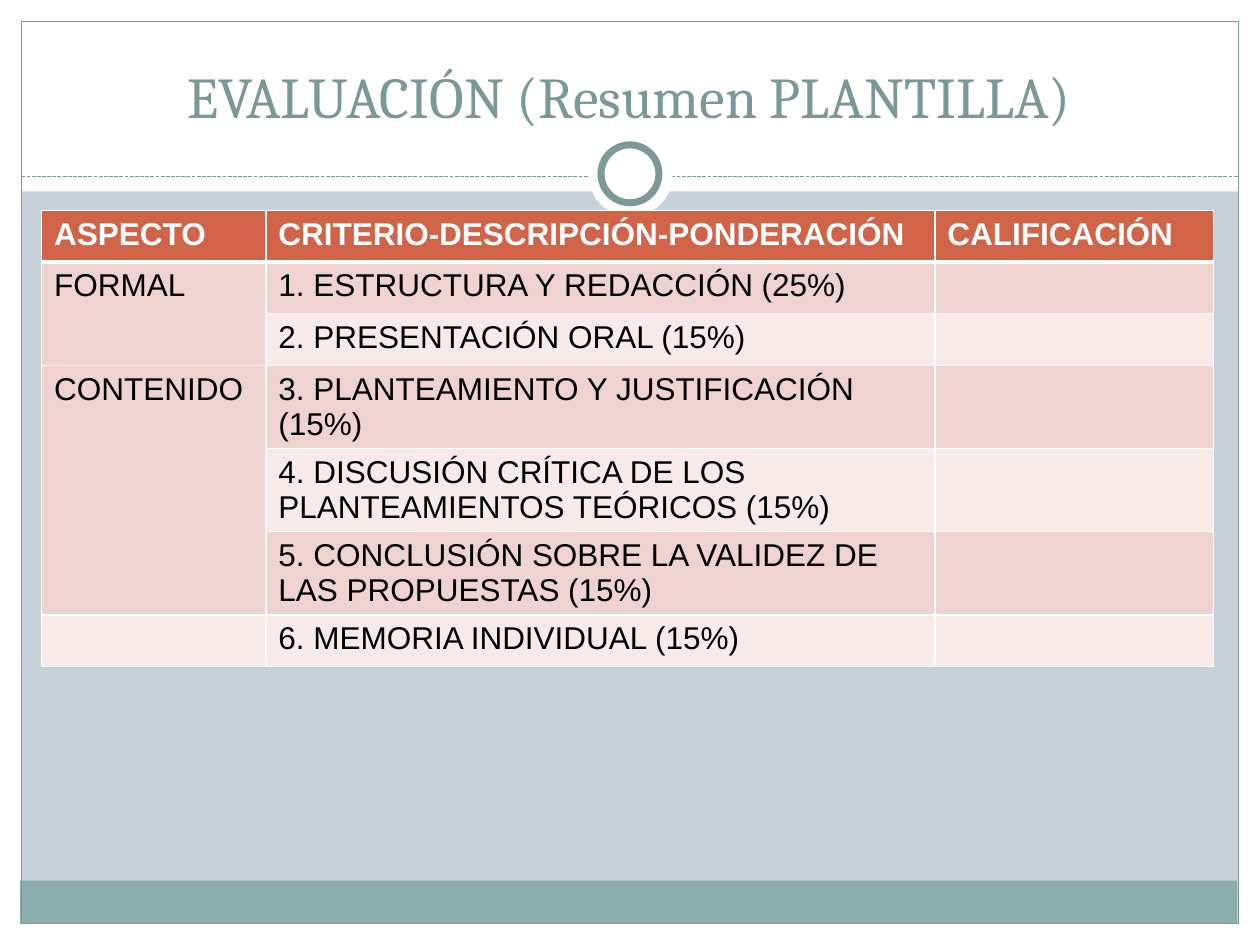
"""Build the evaluation summary slide with its criteria table."""
from dataclasses import dataclass
from typing import Optional

from lxml import etree
from pptx import Presentation
from pptx.dml.color import RGBColor
from pptx.enum.dml import MSO_LINE
from pptx.enum.shapes import MSO_CONNECTOR, MSO_SHAPE
from pptx.enum.text import MSO_ANCHOR, PP_ALIGN
from pptx.oxml.ns import qn
from pptx.util import Inches, Pt

RECT, OVAL = MSO_SHAPE.RECTANGLE, MSO_SHAPE.OVAL
STRAIGHT, DASH = MSO_CONNECTOR.STRAIGHT, MSO_LINE.SQUARE_DOT
CENTER, BOTTOM = PP_ALIGN.CENTER, MSO_ANCHOR.BOTTOM
WHITE, SLATE, TEAL, BLUE_GREY = "FFFFFF", "7C999A", "8CADAE", "C5D1D7"
HEADER_FILL, BANDS = "D16349", ("F7EAE9", "EED3D0")
COLUMN_WIDTHS, ROW_HEIGHT = (1.78, 5.31, 2.21), 0.41
HEADER = ("ASPECTO", "CRITERIO-DESCRIPCIÓN-PONDERACIÓN", "CALIFICACIÓN")


@dataclass
class Panel:
    """A filled or outlined part of the frame, in inches and points."""
    left: float
    top: float
    width: float
    height: float
    fill: Optional[str] = WHITE
    line_width: float = 0
    kind: int = RECT


@dataclass
class Aspect:
    """An aspect and the criteria that it spans."""
    name: str
    criteria: tuple


BACKDROP = (
    Panel(0, 7.33, 10, 0.17),
    Panel(0, 0, 10, 1.52),
    Panel(0, 0, 0.17, 7.5),
    Panel(9.83, 0, 0.17, 7.5),
    Panel(0.16, 6.99, 9.66, 0.34, TEAL),
    Panel(0.17, 0.17, 9.66, 7.16, None, 0.75),
)
RING = (
    Panel(4.67, 1.05, 0.67, 0.67, kind=OVAL),
    Panel(4.77, 1.15, 0.46, 0.46, line_width=4, kind=OVAL),
)
ASPECTS = (
    Aspect("FORMAL", ("1. ESTRUCTURA Y REDACCIÓN (25%)",
                      "2. PRESENTACIÓN ORAL (15%)")),
    Aspect("CONTENIDO", ("3. PLANTEAMIENTO Y JUSTIFICACIÓN (15%)",
                         "4. DISCUSIÓN CRÍTICA DE LOS PLANTEAMIENTOS TEÓRICOS (15%)",
                         "5. CONCLUSIÓN SOBRE LA VALIDEZ DE LAS PROPUESTAS (15%)")),
    Aspect("", ("6. MEMORIA INDIVIDUAL (15%)",)),
)


def rgb(value: str) -> RGBColor:
    """Return the colour for a hex string."""
    return RGBColor.from_string(value)


def paint(fill, color: str) -> None:
    """Give a fill one solid colour."""
    fill.solid()
    fill.fore_color.rgb = rgb(color)


def set_font(font, color: str, **values) -> None:
    """Set a font's colour and its other format values."""
    font.color.rgb = rgb(color)
    for name, value in values.items():
        setattr(font, name, value)


def draw_panel(slide, panel: Panel) -> None:
    """Draw one panel of the frame."""
    box = map(Inches, (panel.left, panel.top, panel.width, panel.height))
    shape = slide.shapes.add_shape(panel.kind, *box)
    shape.shadow.inherit = False
    if panel.fill:
        paint(shape.fill, panel.fill)
    else:
        shape.fill.background()
    if panel.line_width:
        paint(shape.line.fill, SLATE)
        shape.line.width = Pt(panel.line_width)
    else:
        shape.line.fill.background()


def draw_divider(slide) -> None:
    """Draw the dashed line under the title."""
    ends = map(Inches, (0.17, 1.4, 9.83, 1.4))
    divider = slide.shapes.add_connector(STRAIGHT, *ends)
    paint(divider.line.fill, SLATE)
    divider.line.width = Pt(0.75)
    divider.line.dash_style = DASH
    etree.SubElement(divider._element.spPr, qn("a:effectLst"))


def place_title(slide, wording: str) -> None:
    """Place the title in front of the frame."""
    title = slide.shapes.title
    slide.shapes._spTree.append(title._element)
    title.left, title.top, title.width, title.height = map(Inches, (0.33, 0.25, 9.33, 0.83))
    title.text_frame.text = wording
    title.text_frame.vertical_anchor = BOTTOM
    heading = title.text_frame.paragraphs[0]
    heading.alignment = CENTER
    set_font(heading.runs[0].font, "7B9899", name="Cambria", size=Pt(33))


def set_borders(cell, top: float, bottom: float) -> None:
    """Give a cell white borders, with widths in points."""
    properties = cell._tc.get_or_add_tcPr()
    widths = {"a:lnL": 1, "a:lnR": 1, "a:lnT": top, "a:lnB": bottom}
    for position, (side, width) in enumerate(widths.items()):
        border = etree.Element(qn(side), w=str(Pt(width)))
        fill = etree.SubElement(border, qn("a:solidFill"))
        etree.SubElement(fill, qn("a:srgbClr"), val=WHITE)
        properties.insert(position, border)


def fill_cell(cell, wording: str, row: int) -> None:
    """Write and format one cell by its row."""
    is_header = row == 0
    paint(cell.fill, HEADER_FILL if is_header else BANDS[row % 2])
    set_borders(cell, top=3 if row == 1 else 1, bottom=3 if is_header else 1)
    cell.text = wording
    set_font(cell.text_frame.paragraphs[0].font, WHITE if is_header else "000000",
             name="Arial", size=Pt(18), bold=is_header)
    for run in cell.text_frame.paragraphs[0].runs:
        set_font(run.font, WHITE if is_header else "000000",
                 name="Arial", size=Pt(18), bold=is_header)


def draw_criteria(slide) -> None:
    """Draw the table of aspects, criteria and marks."""
    rows = [HEADER]
    spans = []
    for aspect in ASPECTS:
        spans.append((len(rows), len(rows) + len(aspect.criteria) - 1))
        for index, criterion in enumerate(aspect.criteria):
            rows.append(("" if index else aspect.name, criterion, ""))
    box = map(Inches, (0.33, 1.67, sum(COLUMN_WIDTHS), ROW_HEIGHT * len(rows)))
    table = slide.shapes.add_table(len(rows), len(HEADER), *box).table
    for column, width in zip(table.columns, COLUMN_WIDTHS):
        column.width = Inches(width)
    for row, wordings in enumerate(rows):
        for column, wording in enumerate(wordings):
            fill_cell(table.cell(row, column), wording, row)
    for first, last in spans:
        if last > first:
            table.cell(first, 0).merge(table.cell(last, 0))


def main() -> None:
    """Build and save the slide."""
    deck = Presentation()
    deck.slide_width, deck.slide_height = Inches(10), Inches(7.5)
    slide = deck.slides.add_slide(deck.slide_layouts[5])
    paint(slide.background.fill, BLUE_GREY)
    for panel in BACKDROP:
        draw_panel(slide, panel)
    draw_divider(slide)
    for panel in RING:
        draw_panel(slide, panel)
    place_title(slide, "EVALUACIÓN (Resumen PLANTILLA)")
    draw_criteria(slide)
    deck.save("out.pptx")


if __name__ == "__main__":
    main()
